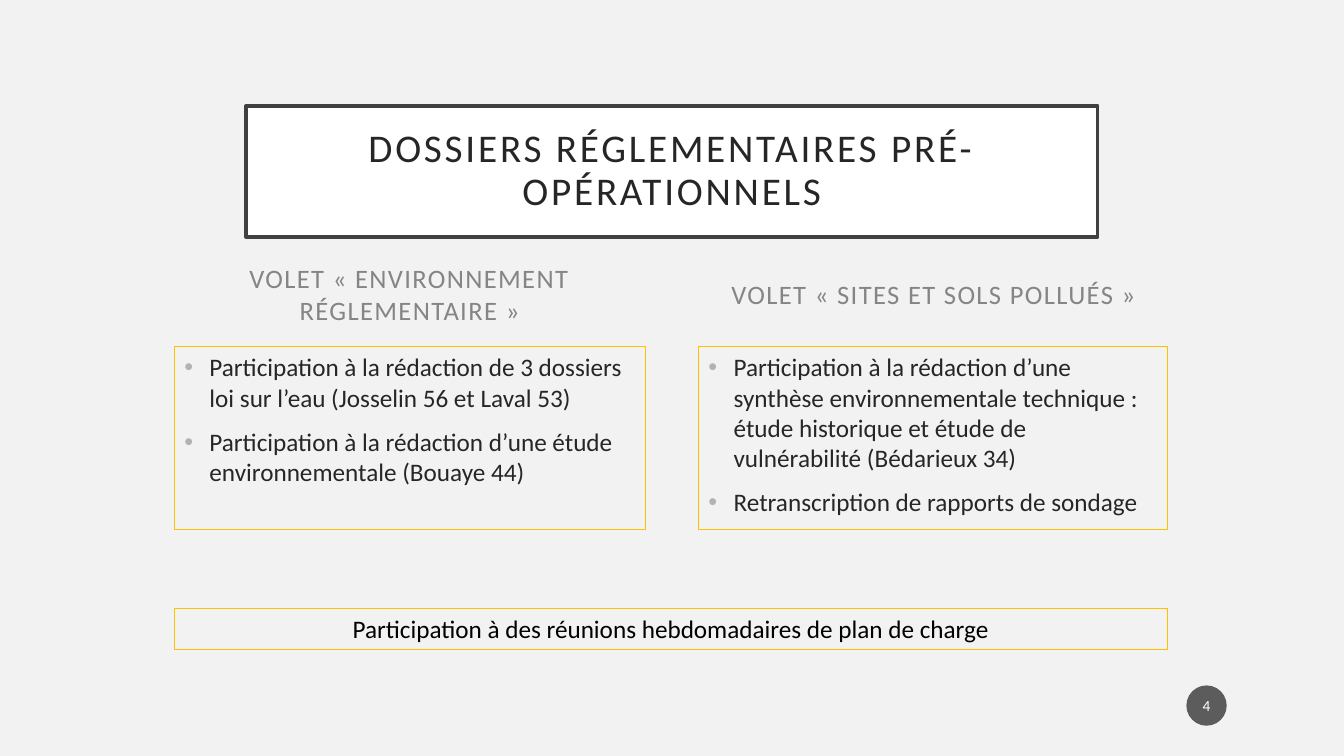
"""Build the slide on pre-operational regulatory files."""
from dataclasses import dataclass

from lxml.etree import SubElement
from pptx import Presentation
from pptx.dml.color import RGBColor
from pptx.enum.shapes import MSO_SHAPE
from pptx.enum.text import MSO_ANCHOR, PP_ALIGN
from pptx.oxml.ns import qn
from pptx.util import Pt


@dataclass(frozen=True)
class Theme:
    font: str = "Calibri"
    background: str = "F2F2F2"
    white: str = "FFFFFF"
    black: str = "000000"
    ink: str = "262626"
    heading: str = "858585"
    bullet: str = "B2B2B2"
    frame: str = "404040"
    accent: str = "FFC000"
    badge: str = "1D1D1D"
    title_size: int = 28
    heading_size: int = 19
    body_size: int = 18
    number_size: int = 11


theme = Theme()
deck = Presentation()
deck.slide_width, deck.slide_height = Pt(960), Pt(540)
page = deck.slides.add_slide(deck.slide_layouts[6])
page.background.fill.solid()
page.background.fill.fore_color.rgb = RGBColor.from_string(theme.background)


def add_text(*texts, at, size, color, shape=MSO_SHAPE.RECTANGLE, fill=None, line=None,
             line_width=0.75, insets=(7.2, 3.6), anchor=MSO_ANCHOR.MIDDLE,
             align=PP_ALIGN.CENTER, bullet=False, tracking=0, line_spacing=1.0):
    """Add a shape holding one paragraph per text."""
    box = page.shapes.add_shape(shape, *map(Pt, at))
    box.shadow.inherit = False
    if fill:
        box.fill.solid()
        box.fill.fore_color.rgb = RGBColor.from_string(fill)
    else:
        box.fill.background()
    if line:
        box.line.color.rgb = RGBColor.from_string(line)
        box.line.width = Pt(line_width)
    else:
        box.line.fill.background()
    frame = box.text_frame
    frame.word_wrap = True
    frame.vertical_anchor = anchor
    frame.margin_left = frame.margin_right = Pt(insets[0])
    frame.margin_top = frame.margin_bottom = Pt(insets[1])
    for index, text in enumerate(texts):
        para = frame.add_paragraph() if index else frame.paragraphs[0]
        para.alignment = align
        para.line_spacing = line_spacing
        para.space_before = Pt(10 if index else 0)
        span = para.add_run()
        span.text = text
        span.font.name = theme.font
        span.font.size = Pt(size)
        span.font.color.rgb = RGBColor.from_string(color)
        if tracking:
            span.font._element.set("spc", str(tracking * 100))
        if bullet:
            properties = para._p.get_or_add_pPr()
            properties.set("marL", str(Pt(18)))
            properties.set("indent", str(Pt(-18)))
            tint = SubElement(properties, qn("a:buClr"))
            SubElement(tint, qn("a:srgbClr"), val=theme.bullet)
            SubElement(properties, qn("a:buFont"), typeface="Arial")
            SubElement(properties, qn("a:buChar"), char="•")
    return box


left, right = 124.56, 498.96
columns = [
    (left, 336.24, "VOLET « ENVIRONNEMENT RÉGLEMENTAIRE »", [
        "Participation à la rédaction de 3 dossiers loi sur l’eau (Josselin 56 et Laval 53)",
        "Participation à la rédaction d’une étude environnementale (Bouaye 44)"]),
    (right, 334.8, "VOLET « SITES ET SOLS POLLUÉS »", [
        "Participation à la rédaction d’une synthèse environnementale technique : "
        "étude historique et étude de vulnérabilité (Bédarieux 34)",
        "Retranscription de rapports de sondage"]),
]
for x, width, heading, items in columns:
    add_text(heading, at=(x, 182.16, 336.24, 55.44), size=theme.heading_size,
             color=theme.heading, tracking=1)
    add_text(*items, at=(x, 247.68, width, 130.32), size=theme.body_size, color=theme.ink,
             line=theme.accent, anchor=MSO_ANCHOR.TOP, align=PP_ALIGN.LEFT, bullet=True)

badge = add_text("4", at=(847.44, 489.6, 28.8, 28.8), size=theme.number_size,
                 color=theme.white, shape=MSO_SHAPE.OVAL, fill=theme.badge,
                 insets=(1.44, 3.6))
badge_color = badge._element.spPr.find(qn("a:solidFill")).find(qn("a:srgbClr"))
SubElement(badge_color, qn("a:alpha"), val="70000")

add_text("DOSSIERS RÉGLEMENTAIRES PRÉ-OPÉRATIONNELS", at=(175.68, 75.6, 608.4, 93.6),
         size=theme.title_size, color=theme.ink, fill=theme.white, line=theme.frame,
         line_width=2.5, insets=(14.4, 14.4), tracking=2, line_spacing=0.9)
add_text("Participation à des réunions hebdomadaires de plan de charge",
         at=(left, 434.88, 709.2, 28.8), size=theme.body_size, color=theme.black,
         line=theme.accent, anchor=MSO_ANCHOR.TOP)

deck.save("out.pptx")
